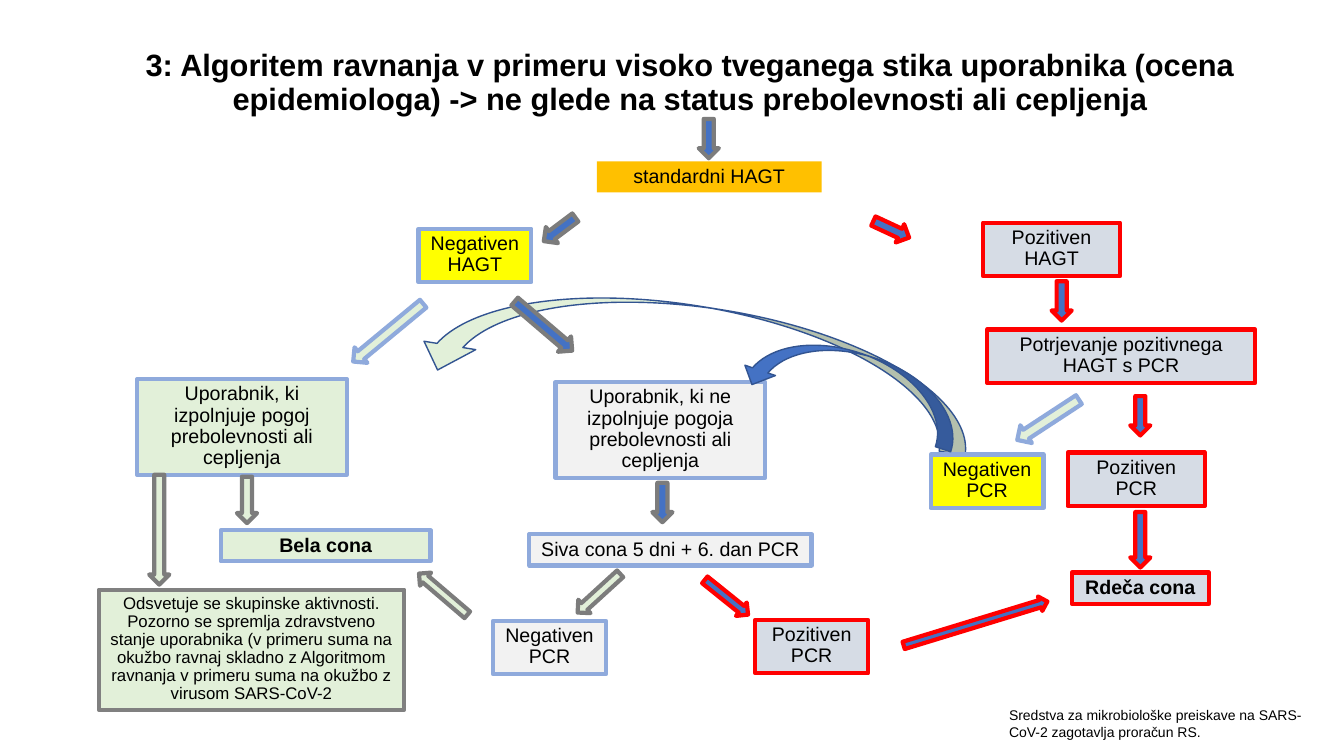
from dataclasses import dataclass

import pptx
import pptx.dml.color
import pptx.enum.shapes
import pptx.enum.text
import pptx.util

Inches = pptx.util.Inches
Pt = pptx.util.Pt
Shapes = pptx.enum.shapes.MSO_SHAPE
Align = pptx.enum.text.PP_ALIGN
Anchor = pptx.enum.text.MSO_ANCHOR
AutoSize = pptx.enum.text.MSO_AUTO_SIZE


@dataclass(frozen=True)
class Theme:
    font: str = "Arial"
    text: str = "000000"
    orange: str = "FFC000"
    yellow: str = "FFFF00"
    green: str = "E2F0D9"
    pale_grey: str = "F2F2F2"
    blue_grey: str = "D6DCE5"
    blue: str = "4472C4"
    light_blue: str = "8FAADC"
    dark_blue: str = "325491"
    red: str = "FF0000"
    grey: str = "7C7C7C"
    box_grey: str = "808080"
    title_size: int = 22
    box_size: int = 14
    detail_size: int = 12
    note_size: int = 10
    border: int = 3
    curve_border: int = 1


THEME = Theme()

TITLE = ("3: Algoritem ravnanja v primeru visoko tveganega stika uporabnika "
         "(ocena epidemiologa) -> ne glede na status prebolevnosti ali cepljenja")
NOTE = "Sredstva za mikrobiološke preiskave na SARS-CoV-2 zagotavlja proračun RS."
ADVICE = ("Odsvetuje se skupinske aktivnosti. Pozorno se spremlja zdravstveno stanje "
          "uporabnika (v primeru suma na okužbo ravnaj skladno z Algoritmom ravnanja "
          "v primeru suma na okužbo z virusom SARS-CoV-2")

# text, (left, top, width, height), fill, border
STEPS = [
    ("standardni HAGT", (5.92, 1.6, 2.23, 0.31), THEME.orange, None),
    ("Negativen HAGT", (4.15, 2.27, 1.12, 0.53), THEME.yellow, THEME.light_blue),
    ("Pozitiven HAGT", (9.75, 2.21, 1.36, 0.53), THEME.blue_grey, THEME.red),
    ("Potrjevanje pozitivnega HAGT s PCR", (9.79, 3.27, 2.66, 0.53),
     THEME.blue_grey, THEME.red),
    ("Negativen PCR", (9.23, 4.51, 1.12, 0.53), THEME.yellow, THEME.light_blue),
    ("Pozitiven PCR", (10.59, 4.49, 1.36, 0.53), THEME.blue_grey, THEME.red),
    ("Uporabnik, ki izpolnjuje pogoj prebolevnosti ali cepljenja",
     (1.36, 3.76, 2.08, 0.95), THEME.green, THEME.light_blue),
    ("Uporabnik, ki ne izpolnjuje pogoja prebolevnosti ali cepljenja",
     (5.51, 3.79, 2.08, 0.95), THEME.pale_grey, THEME.light_blue),
    ("Siva cona 5 dni + 6. dan PCR", (5.25, 5.3, 2.8, 0.31),
     THEME.pale_grey, THEME.light_blue),
    ("Negativen PCR", (4.89, 6.16, 1.12, 0.53), THEME.pale_grey, THEME.light_blue),
    ("Pozitiven PCR", (7.49, 6.15, 1.12, 0.53), THEME.blue_grey, THEME.red),
]
ZONES = [
    ("Bela cona", (2.19, 5.26, 2.08, 0.31), THEME.green, THEME.light_blue),
    ("Rdeča cona", (10.63, 5.68, 1.36, 0.31), THEME.blue_grey, THEME.red),
]

# (left, top, width, height), rotation; grouped by fill and border
ARROWS = {
    (THEME.blue, THEME.grey): [
        ((6.93, 1.18, 0.2, 0.39), 0),
        ((5.45, 2.08, 0.2, 0.39), 53.1),
        ((5.29, 2.86, 0.2, 0.75), 310.5),
        ((6.47, 4.79, 0.2, 0.39), 0),
    ],
    (THEME.blue, THEME.red): [
        ((8.74, 2.08, 0.2, 0.39), 294.9),
        ((10.43, 2.79, 0.2, 0.39), 0),
        ((11.21, 3.93, 0.2, 0.39), 0),
        ((11.21, 5.08, 0.2, 0.55), 0),
        ((7.12, 5.65, 0.17, 0.55), 308.8),
        ((9.6, 5.44, 0.15, 1.49), 253),
    ],
    (THEME.green, THEME.grey): [
        ((2.35, 4.73, 0.2, 0.46), 0),
        ((1.48, 4.71, 0.2, 1.09), 0),
        ((5.85, 5.6, 0.18, 0.57), 47.6),
        ((4.31, 5.58, 0.17, 0.63), 130.5),
    ],
    (THEME.green, THEME.light_blue): [
        ((3.75, 2.85, 0.2, 0.9), 50.4),
        ((10.29, 3.8, 0.21, 0.73), 56.8),
    ],
}


def rgb(colour):
    return pptx.dml.color.RGBColor.from_string(colour)


def write(frame, text, size, bold=False, align=Align.CENTER, spacing=0.9):
    frame.word_wrap = True
    paragraph = frame.paragraphs[0]
    paragraph.alignment = align
    paragraph.line_spacing = spacing
    run = paragraph.add_run()
    run.text = text
    run.font.name = THEME.font
    run.font.size = Pt(size)
    run.font.bold = bold
    run.font.color.rgb = rgb(THEME.text)


def add_figure(slide, kind, place, fill, border, weight=THEME.border, rotation=0):
    """Add a filled preset shape, with an outline if a border colour is given."""
    figure = slide.shapes.add_shape(kind, *map(Inches, place))
    figure.shadow.inherit = False
    figure.rotation = rotation
    figure.fill.solid()
    figure.fill.fore_color.rgb = rgb(fill)
    if border:
        figure.line.color.rgb = rgb(border)
        figure.line.width = Pt(weight)
    else:
        figure.line.fill.background()
    return figure


def add_box(slide, text, place, fill, border, size=THEME.box_size, bold=False):
    frame = add_figure(slide, Shapes.RECTANGLE, place, fill, border).text_frame
    frame.vertical_anchor = Anchor.TOP
    frame.auto_size = AutoSize.SHAPE_TO_FIT_TEXT
    write(frame, text, size, bold)


def add_curve(slide, place, fill, rotation):
    add_figure(slide, Shapes.CURVED_UP_ARROW, place, fill, THEME.dark_blue,
               THEME.curve_border, rotation)


def add_title(slide):
    title = slide.shapes.title
    title.left, title.top, title.width, title.height = map(
        Inches, (0.74, 0.22, 12.21, 1.22))
    title.text_frame.vertical_anchor = Anchor.MIDDLE
    title.text_frame.auto_size = AutoSize.NONE
    write(title.text_frame, TITLE, THEME.title_size, bold=True)


def add_note(slide):
    note = slide.shapes.add_textbox(*map(Inches, (9.91, 6.96, 3.23, 0.44)))
    write(note.text_frame, NOTE, THEME.note_size, align=Align.LEFT, spacing=1.0)


def main():
    deck = pptx.Presentation()
    deck.slide_width, deck.slide_height = Inches(13.33), Inches(7.5)
    slide = deck.slides.add_slide(deck.slide_layouts.get_by_name("Title Only"))

    add_title(slide)
    add_curve(slide, (4.13, 3.04, 5.56, 1.04), THEME.green, 189.2)
    for step in STEPS:
        add_box(slide, *step)
    for zone in ZONES:
        add_box(slide, *zone, bold=True)
    add_box(slide, ADVICE, (0.98, 5.85, 3.03, 1.19), THEME.green, THEME.box_grey,
            size=THEME.detail_size)
    for (fill, border), arrows in ARROWS.items():
        for place, rotation in arrows:
            add_figure(slide, Shapes.DOWN_ARROW, place, fill, border,
                       rotation=rotation)
    add_curve(slide, (7.35, 3.5, 2.24, 0.64), THEME.blue, 198.7)
    add_note(slide)

    deck.save("out.pptx")


if __name__ == "__main__":
    main()
